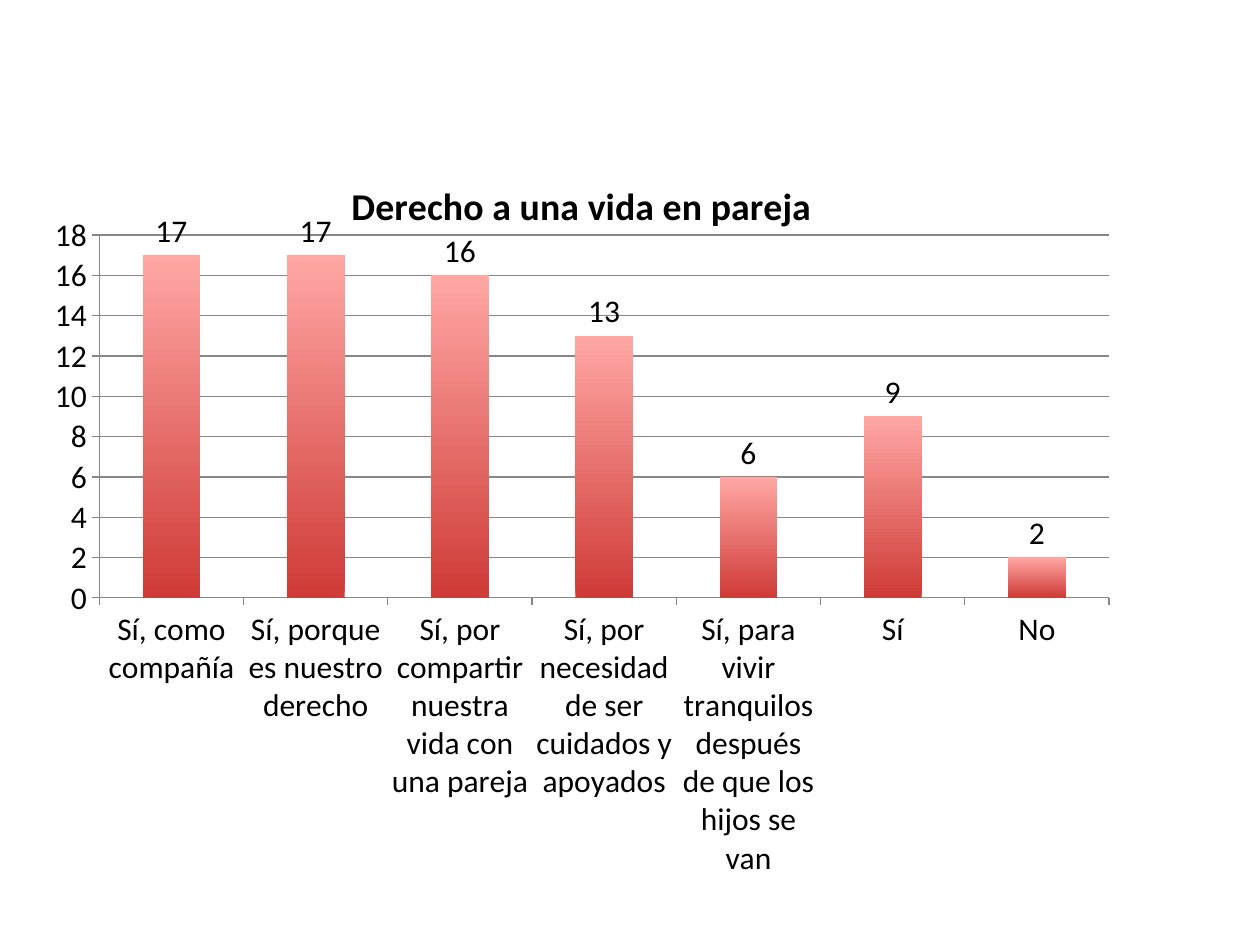
from lxml import etree
from pptx import Presentation
from pptx.chart.data import CategoryChartData
from pptx.dml.color import RGBColor
from pptx.enum.chart import XL_CHART_TYPE as ChartType
from pptx.enum.chart import XL_LABEL_POSITION as LabelPos
from pptx.enum.chart import XL_TICK_MARK as Tick
from pptx.oxml.ns import qn
from pptx.util import Pt

FONT = "Calibri"
BLACK, GREY, RED, PINK = "000000", "878787", "CF3B37", "FFA7A4"
ANSWERS = {
    "Sí, como compañía": 17,
    "Sí, porque es nuestro derecho": 17,
    "Sí, por compartir nuestra vida con una pareja": 16,
    "Sí, por necesidad de ser cuidados y apoyados": 13,
    "Sí, para vivir tranquilos después de que los hijos se van": 6,
    "Sí": 9,
    "No": 2,
}


def rgb(color):
    return RGBColor.from_string(color)


def style_font(font, size, bold=False):
    font.name = FONT
    font.size = Pt(size)
    font.bold = bold
    font.color.rgb = rgb(BLACK)


def set_layout(parent, index, **values):
    for old in parent.findall(qn("c:layout")):
        parent.remove(old)
    layout = etree.Element(qn("c:layout"))
    manual = etree.SubElement(layout, qn("c:manualLayout"))
    for tag, value in values.items():
        etree.SubElement(manual, qn(f"c:{tag}")).set("val", str(value))
    parent.insert(index, layout)


def add_title(chart, text):
    chart.has_title = True
    title = chart.chart_title
    p = title.text_frame.paragraphs[0]
    r = p.add_run()
    r.text = text
    style_font(r.font, 21.6, bold=True)
    set_layout(title._element, 1, xMode="edge", yMode="edge", x=0.26, y=0.01)


def style_axes(chart):
    for axis in (chart.category_axis, chart.value_axis):
        axis.major_tick_mark = Tick.OUTSIDE
        axis.minor_tick_mark = Tick.NONE
        axis.format.line.color.rgb = rgb(GREY)
        axis.format.line.width = Pt(0.75)
    values = chart.value_axis
    values.minimum_scale, values.maximum_scale, values.major_unit = 0, 18, 2
    values.has_major_gridlines = True
    values.major_gridlines.format.line.color.rgb = rgb(GREY)
    values.major_gridlines.format.line.width = Pt(0.75)


def style_columns(plot):
    plot.gap_width = 150
    plot.vary_by_categories = False
    fill = plot.series[0].format.fill
    fill.gradient()
    fill.gradient_angle = 90
    for stop, color in zip(fill.gradient_stops, (RED, PINK)):
        stop.color.rgb = rgb(color)
    plot.has_data_labels = True
    labels = plot.data_labels
    labels.show_value = True
    labels.position = LabelPos.OUTSIDE_END
    style_font(labels.font, 18)


def add_answer_chart(slide, left, top, width, height):
    data = CategoryChartData()
    data.categories = list(ANSWERS)
    data.add_series("Series 1", list(ANSWERS.values()))
    chart = slide.shapes.add_chart(
        ChartType.COLUMN_CLUSTERED, Pt(left), Pt(top), Pt(width), Pt(height), data
    ).chart
    style_font(chart.font, 18)
    chart.has_legend = False
    add_title(chart, "Derecho a una vida en pareja")
    style_axes(chart)
    style_columns(chart.plots[0])
    plot_area = chart._chartSpace.find(".//" + qn("c:plotArea"))
    set_layout(plot_area, 0, layoutTarget="inner", xMode="edge", yMode="edge",
               x=0.054, y=0.096, w=0.848, h=0.501)


def main():
    prs = Presentation()
    prs.slide_width, prs.slide_height = Pt(720), Pt(540)
    slide = prs.slides.add_slide(prs.slide_layouts[6])
    add_answer_chart(slide, 20, 94.5, 680.5, 414)
    prs.save("out.pptx")


if __name__ == "__main__":
    main()
